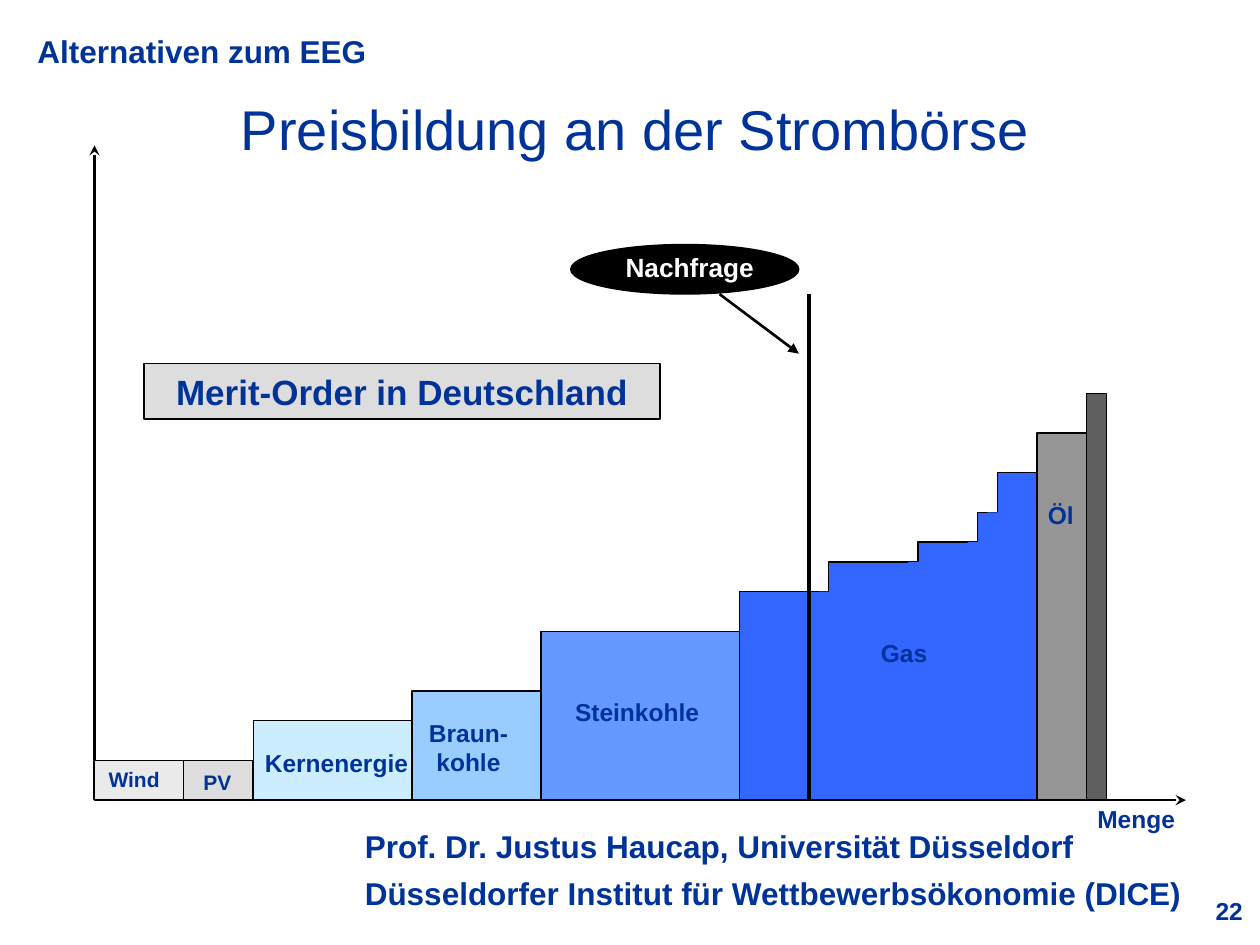
import pptx
import pptx.util
import pptx.dml.color
import pptx.enum.shapes
import pptx.enum.text
import pptx.oxml.ns
import lxml.etree

Kind = pptx.enum.shapes.MSO_SHAPE
Align = pptx.enum.text.PP_ALIGN
Pt = pptx.util.Pt

INK = {
    "navy": "003399", "black": "000000", "white": "FFFFFF",
    "wind": "EAEAEA", "grey": "DDDDDD", "nuclear": "CCECFF",
    "lignite": "99CCFF", "coal": "6699FF", "gas": "3366FF",
    "oil": "969696", "peak": "5F5F5F",
}


def tint(name):
    return pptx.dml.color.RGBColor.from_string(INK[name])


class Chart:
    """Draws on a 2 mm grid: columns run right and rows run up from the origin."""

    unit = pptx.util.Mm(2)
    left = pptx.util.Inches(0.75)
    base = pptx.util.Inches(6.35)
    font = "Arial"

    def __init__(self, slide):
        self.shapes = slide.shapes

    def spot(self, col, row):
        return round(self.left + col * self.unit), round(self.base - row * self.unit)

    def frame(self, col, row, wide, high):
        """Position and size of a box whose top left corner is at col, row."""
        return *self.spot(col, row), round(wide * self.unit), round(high * self.unit)

    def box(self, col, row, wide, high, fill, kind=Kind.RECTANGLE, edge=True):
        item = self.shapes.add_shape(kind, *self.frame(col, row, wide, high))
        item.shadow.inherit = False
        item.fill.solid()
        item.fill.fore_color.rgb = tint(fill)
        if edge:
            item.line.color.rgb = tint("black")
            item.line.width = Pt(0.75)
        else:
            item.line.fill.background()
        return item

    def letter(self, item, words, size, ink="navy", bold=True, align=Align.CENTER, gap=0):
        """Put styled words into a shape."""
        body = item.text_frame
        body.word_wrap = True
        body.vertical_anchor = pptx.enum.text.MSO_ANCHOR.MIDDLE
        body.margin_top = body.margin_bottom = 0
        body.text = words
        for i, para in enumerate(body.paragraphs):
            para.alignment = align
            para.space_before = Pt(gap if i else 0)
            para.font.name = self.font
            para.font.size = Pt(size)
            para.font.bold = bold
            para.font.color.rgb = tint(ink)

    def text(self, words, col, row, wide, high, size, **style):
        item = self.shapes.add_textbox(*self.frame(col, row, wide, high))
        self.letter(item, words, size, **style)

    def label(self, words, col, row, size=14, ink="navy"):
        """Text centred on a grid point."""
        wide, high = 18, 6
        self.text(words, col - wide / 2, row + high / 2, wide, high, size, ink=ink)

    def line(self, start, end, width=1.5, head=None):
        item = self.shapes.add_connector(
            pptx.enum.shapes.MSO_CONNECTOR.STRAIGHT, *self.spot(*start), *self.spot(*end))
        item.line.color.rgb = tint("black")
        item.line.width = Pt(width)
        qn = pptx.oxml.ns.qn
        props = item._element.spPr
        if head:
            lxml.etree.SubElement(props.find(qn("a:ln")), qn("a:tailEnd"), type=head)
        lxml.etree.SubElement(props, qn("a:effectLst"))


def bars(chart):
    """Plants from cheap to dear, with the gas steps merged into one area."""
    plants = [
        (9, 4, "wind"), (7, 4, "grey"), (16, 8, "nuclear"), (13, 11, "lignite"),
        (20, 17, "coal"), (9, 21, "gas"), (9, 24, "gas"), (6, 26, "gas"),
        (2, 29, "gas"), (4, 33, "gas"), (5, 37, "oil"), (2, 41, "peak"),
    ]
    col, seams = 0, []
    for i, (wide, high, fill) in enumerate(plants):
        chart.box(col, high, wide, high, fill)
        col += wide
        if fill == "gas" and plants[i + 1][2] == "gas":
            seams.append((col, high))
    for col, high in seams:
        chart.box(col - 1, high, 2, high, "gas", edge=False)


def main():
    deck = pptx.Presentation()
    deck.slide_width = pptx.util.Inches(10)
    deck.slide_height = pptx.util.Inches(7.5)
    chart = Chart(deck.slides.add_slide(deck.slide_layouts[6]))

    chart.text("Alternativen zum EEG", -7, 78, 85, 5, 18, align=Align.LEFT)
    chart.text("22", 90, -9, 27, 4.3, 14, align=Align.RIGHT)
    chart.text("Prof. Dr. Justus Haucap, Universität Düsseldorf\n"
               "Düsseldorfer Institut für Wettbewerbsökonomie (DICE)",
               26, -2, 86, 10, 18, align=Align.LEFT, gap=5)
    chart.text("Preisbildung an der Strombörse", -1, 72, 111, 8.5, 32, bold=False)

    chart.box(48, 56, 23, 5, "black", Kind.OVAL)
    chart.line((0, 0), (0, 66), head="stealth")
    chart.letter(chart.box(5, 44, 52, 5.6, "grey"), "Merit-Order in Deutschland", 20)
    bars(chart)
    chart.line((0, 0), (110, 0), head="stealth")
    chart.label("Menge", 105, -1.9)

    chart.label("Wind", 4, 2.1, 12)
    chart.label("PV", 12.4, 1.8, 12)
    chart.label("Kernenergie", 24.4, 3.8)
    chart.label("Braun-\vkohle", 37.7, 5.3)
    chart.label("Steinkohle", 54.7, 8.9)
    chart.label("Gas", 81.6, 14.9)
    chart.label("Öl", 97.4, 28.8)

    chart.line((72, 51), (72, 0), 2.25)
    chart.label("Nachfrage", 60, 53.7, 15, "white")
    chart.line((63, 51), (71, 45), head="triangle")
    deck.save("out.pptx")


if __name__ == "__main__":
    main()
